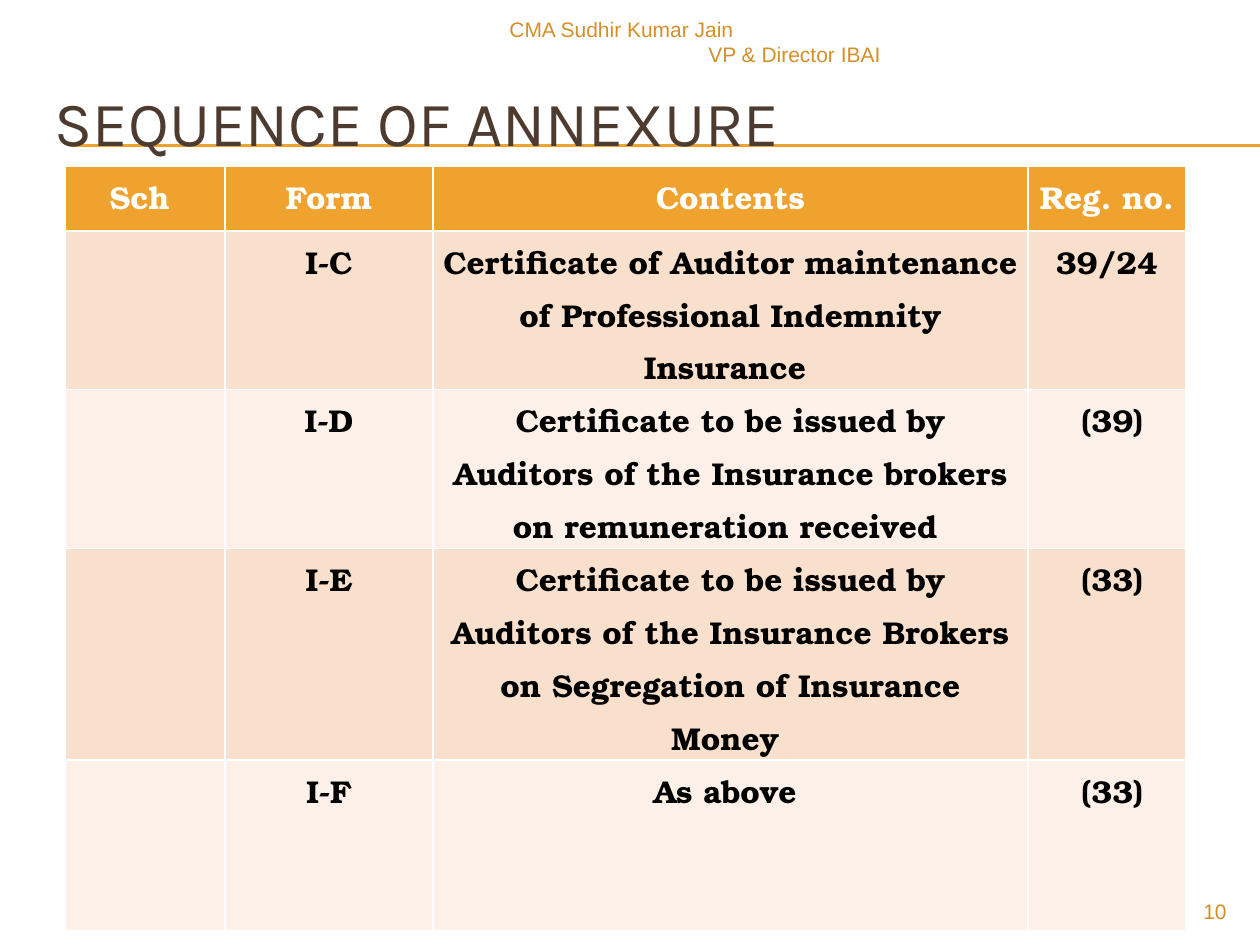
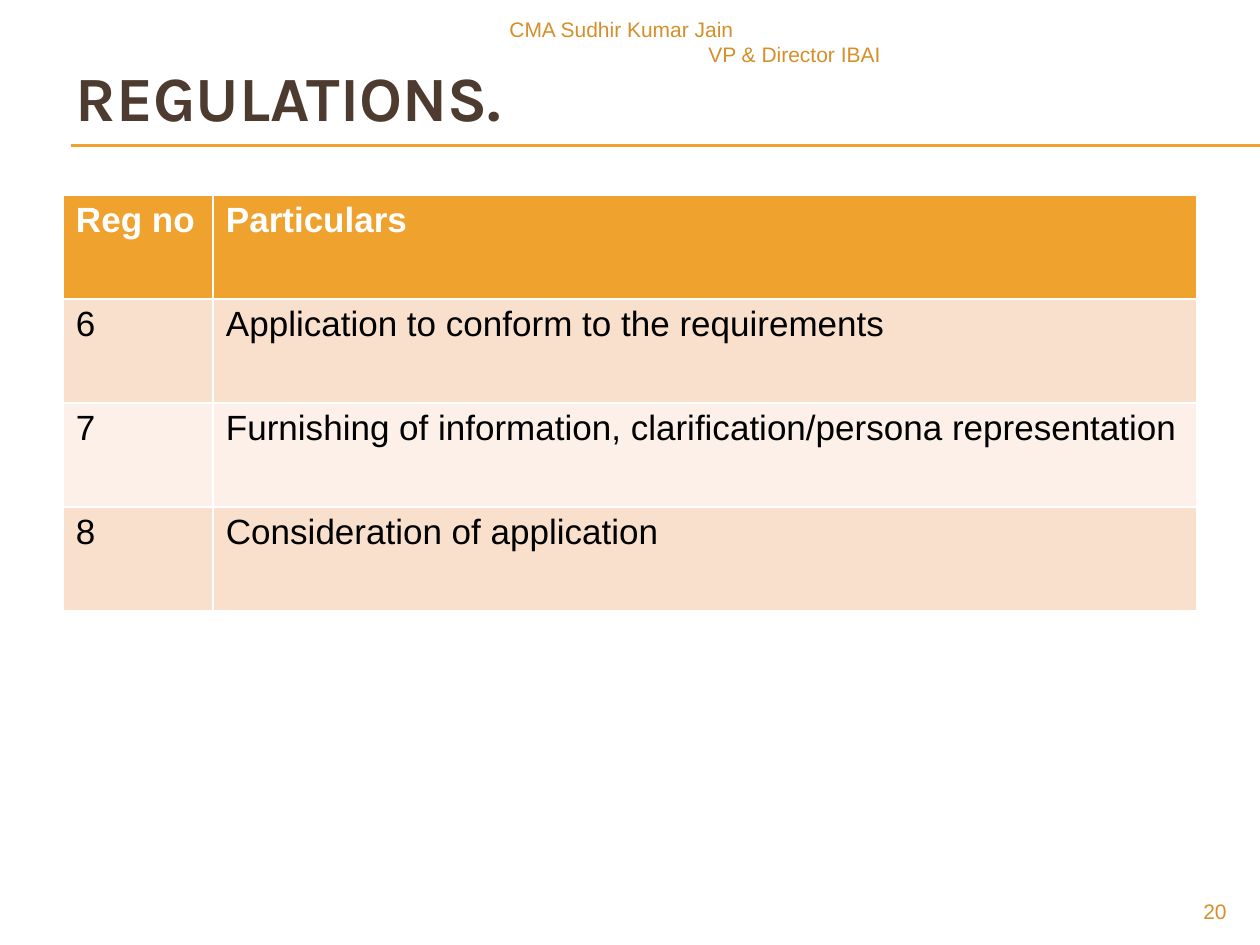
import pptx
import pptx.util
import pptx.dml.color
import pptx.enum.shapes
import pptx.enum.text
import lxml.etree

ALIGN = pptx.enum.text.PP_ALIGN
ORANGE, BROWN, FOOTER_ORANGE = "F0A22E", "4E3B30", "D48F29"
WHITE, BLACK = "FFFFFF", "000000"
BANDS = ["F9E0CD", "FCF0E8"]


def px(count):
    return pptx.util.Emu(round(count * 914400 / 126))


def style(para, size, name, colour, bold=False, align=ALIGN.LEFT):
    para.alignment = align
    para.font.size = pptx.util.Pt(size)
    para.font.name = name
    para.font.bold = bold
    para.font.color.rgb = pptx.dml.color.RGBColor.from_string(colour)


pages = [
    {
        "title": "SEQUENCE OF ANNEXURE", "title_box": (42, 63, 1197, 116), "title_bold": False,
        "number": "10", "corner": (65, 166),
        "columns": [160, 208, 595, 158], "heights": [65, 130, 130, 174, 171],
        "font": "TeX Gyre Bonum", "size": 18, "bold": True, "align": ALIGN.CENTER,
        "spacing": 1.15, "margins": (9, 0),
        "rows": [
            ["Sch ", "Form", "Contents", "Reg. no."],
            ["", "I-C", "Certificate of Auditor maintenance of Professional Indemnity Insurance ", "39/24"],
            ["", "I-D", "Certificate to be issued by Auditors of the Insurance brokers on remuneration received ", " (39)"],
            ["", "I-E", "Certificate to be issued by Auditors of the Insurance Brokers on Segregation of Insurance Money ", " (33)"],
            ["", "I-F", "As above ", " (33)"],
        ],
    },
    {
        "title": "REGULATIONS.", "title_box": (63, 38, 1134, 117), "title_bold": True,
        "number": "20", "corner": (63, 195),
        "columns": [150, 984], "heights": [104] * 4,
        "font": "Arial", "size": 20, "bold": False, "align": ALIGN.LEFT,
        "spacing": 1.0, "margins": (13, 6),
        "rows": [
            ["Reg no", "Particulars"],
            ["6", "Application to conform to the requirements"],
            ["7", "Furnishing of information, clarification/persona representation"],
            ["8", "Consideration of application"],
        ],
    },
]

deck = pptx.Presentation()
deck.slide_width, deck.slide_height = px(1260), px(945)

for page in pages:
    slide = deck.slides.add_slide(deck.slide_layouts[5])

    for y in (145, 146):
        rule = slide.shapes.add_connector(
            pptx.enum.shapes.MSO_CONNECTOR.STRAIGHT, px(71), px(y), px(1260), px(y))
        rule.line.width = pptx.util.Pt(0.75)
        rule.line.color.rgb = pptx.dml.color.RGBColor.from_string(ORANGE)
        lxml.etree.SubElement(rule._element.spPr, pptx.oxml.ns.qn("a:effectLst"))

    title = slide.shapes.title
    title.left, title.top, title.width, title.height = map(px, page["title_box"])
    frame = title.text_frame
    frame.text = page["title"]
    frame.word_wrap = True
    frame.auto_size = pptx.enum.text.MSO_AUTO_SIZE.NONE
    frame.vertical_anchor = pptx.enum.text.MSO_ANCHOR.MIDDLE
    style(frame.paragraphs[0], 36, "Karla", BROWN, page["title_bold"])
    slide.shapes._spTree.append(title._element)

    left, top = page["corner"]
    table = slide.shapes.add_table(
        len(page["heights"]), len(page["columns"]), px(left), px(top),
        px(sum(page["columns"])), px(sum(page["heights"]))).table
    for column, width in zip(table.columns, page["columns"]):
        column.width = px(width)
    side, edge = page["margins"]
    for r, texts in enumerate(page["rows"]):
        table.rows[r].height = px(page["heights"][r])
        header = r == 0
        for c, text in enumerate(texts):
            cell = table.cell(r, c)
            cell.fill.solid()
            fill = ORANGE if header else BANDS[(r - 1) % 2]
            cell.fill.fore_color.rgb = pptx.dml.color.RGBColor.from_string(fill)
            cell.margin_left = cell.margin_right = px(side)
            cell.margin_top = cell.margin_bottom = px(edge)
            cell.text = text
            para = cell.text_frame.paragraphs[0]
            para.line_spacing = page["spacing"]
            style(para, page["size"], page["font"], WHITE if header else BLACK,
                  header or page["bold"], page["align"])

    credit = slide.shapes.add_textbox(px(497), px(10), px(396), px(40)).text_frame
    credit.word_wrap = True
    credit.text = "CMA Sudhir Kumar Jain\nVP & Director IBAI"
    for para, align in zip(credit.paragraphs, (ALIGN.LEFT, ALIGN.RIGHT)):
        style(para, 12, "Arial", FOOTER_ORANGE, align=align)

    number = slide.shapes.add_textbox(px(1134), px(892), px(105), px(34)).text_frame
    number.word_wrap = True
    number.text = page["number"]
    style(number.paragraphs[0], 12, "Arial", FOOTER_ORANGE, align=ALIGN.RIGHT)

deck.save("out.pptx")
